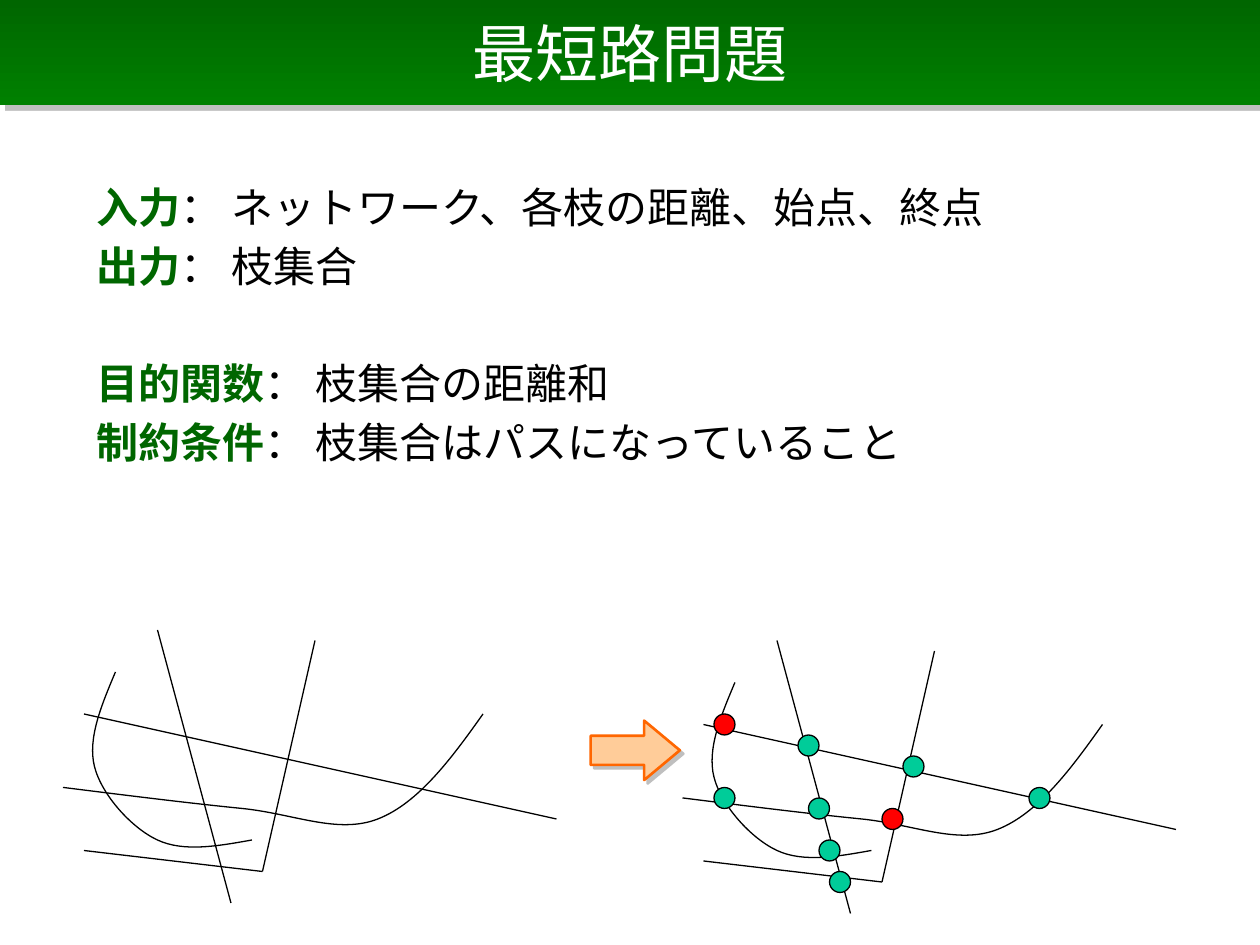
import pptx
import pptx.util
import pptx.dml.color
import pptx.enum.shapes
import pptx.enum.text
import pptx.oxml
import pptx.oxml.ns
import lxml.etree

Pt = pptx.util.Pt
qn = pptx.oxml.ns.qn
SHAPE = pptx.enum.shapes.MSO_SHAPE
FONT = "Times New Roman"


def color(hex_value):
    return pptx.dml.color.RGBColor.from_string(hex_value)


def set_shadow(shape, distance):
    """Replace the theme effects by a half-transparent grey shadow, or by none at 0."""
    shape_properties = shape._element.spPr
    for old in shape_properties.findall(qn("a:effectLst")):
        shape_properties.remove(old)
    effects = lxml.etree.SubElement(shape_properties, qn("a:effectLst"))
    if distance:
        effects.append(pptx.oxml.parse_xml(
            f'<a:outerShdw {pptx.oxml.ns.nsdecls("a")} dist="{Pt(distance)}" '
            'dir="2700000" algn="ctr" rotWithShape="0"><a:srgbClr val="808080">'
            '<a:alpha val="50000"/></a:srgbClr></a:outerShdw>'))


presentation = pptx.Presentation()
presentation.slide_width = Pt(720)
presentation.slide_height = Pt(540)
slide = presentation.slides.add_slide(presentation.slide_layouts[6])
shapes = slide.shapes

# Title band
title = shapes.add_shape(SHAPE.RECTANGLE, 0, 0, Pt(720), Pt(60))
title.fill.gradient()
title.fill.gradient_angle = 270
for stop, (position, shade) in zip(title.fill.gradient_stops, [(0, "006600"), (1, "008000")]):
    stop.position = position
    stop.color.rgb = color(shade)
title.line.fill.background()
set_shadow(title, 4.2)
title.text_frame.vertical_anchor = pptx.enum.text.MSO_ANCHOR.MIDDLE
heading = title.text_frame.paragraphs[0]
heading.text = "最短路問題"
heading.alignment = pptx.enum.text.PP_ALIGN.CENTER
heading.font.size = Pt(36)
heading.font.name = FONT
heading.font.color.rgb = color("FFFFFF")

# Problem definition: term, description, space before
definitions = [
    ("入力", "： ネットワーク、各枝の距離、始点、終点", 4.8),
    ("出力", "： 枝集合", 4.8),
    ("目的関数", "： 枝集合の距離和", 38.4),
    ("制約条件", "： 枝集合はパスになっていること", 4.8),
]
body = shapes.add_textbox(Pt(48), Pt(100), Pt(612), Pt(264)).text_frame
body.word_wrap = True
for i, (term, description, space) in enumerate(definitions):
    line = body.add_paragraph() if i else body.paragraphs[0]
    line.space_before = Pt(space)
    line.font.size = Pt(24)
    line.font.name = FONT
    properties = line._p.get_or_add_pPr()
    properties.set("marL", str(Pt(27)))
    properties.set("indent", str(Pt(-27)))
    for text, shade, bold in [(term, "006600", True), (description, "000000", False)]:
        run = line.add_run()
        run.text = text
        run.font.bold = bold
        run.font.color.rgb = color(shade)

# Road map, drawn once plain and once under the nodes
straight_roads = [
    (90, 360, 132, 516),
    (48, 408, 318, 468),
    (48, 486, 150, 498),
    (150, 498, 180, 366),
]
# Each curve: start point, then two control points and an end point per segment
curved_roads = [
    [(276, 408), (258, 433.5), (239, 459), (216, 468), (193, 477), (168, 465),
     (138, 462), (108, 459), (72, 454.5), (36, 450)],
    [(66, 384), (58, 403), (50, 422), (54, 438), (58, 454), (75, 473),
     (90, 480), (105, 487), (124.5, 483.5), (144, 480)],
]
for dx, dy in [(0, 0), (354, 6)]:
    for x1, y1, x2, y2 in straight_roads:
        road = shapes.add_connector(pptx.enum.shapes.MSO_CONNECTOR.STRAIGHT,
                                    Pt(x1 + dx), Pt(y1 + dy), Pt(x2 + dx), Pt(y2 + dy))
        road.line.color.rgb = color("000000")
        road.line.width = Pt(0.75)
        set_shadow(road, 0)
    for points in curved_roads:
        start, *rest = [(Pt(x + dx), Pt(y + dy)) for x, y in points]
        builder = shapes.build_freeform(*start)
        builder.add_line_segments(rest, close=False)
        road = builder.convert_to_shape()
        # Join every three line segments into one Bézier segment
        outline = road._element.find(".//" + qn("a:path"))
        for n, segment in enumerate(outline.findall(qn("a:lnTo"))):
            if n % 3 == 0:
                bezier = lxml.etree.SubElement(outline, qn("a:cubicBezTo"))
            bezier.append(segment[0])
            outline.remove(segment)
        road.fill.background()
        road.line.color.rgb = color("000000")
        road.line.width = Pt(0.75)
        road.shadow.inherit = False

# Nodes at the crossings; start and end are red
crossings = [(456, 420), (408, 450), (468, 480), (516, 432),
             (588, 450), (462, 456), (474, 498)]
endpoints = [(408, 408), (504, 462)]
for shade, places in [("00CC99", crossings), ("FF0000", endpoints)]:
    for x, y in places:
        node = shapes.add_shape(SHAPE.OVAL, Pt(x), Pt(y), Pt(12), Pt(12))
        node.fill.solid()
        node.fill.fore_color.rgb = color(shade)
        node.line.color.rgb = color("000000")
        node.line.width = Pt(0.75)
        node.shadow.inherit = False

# Arrow from roads to network
arrow = shapes.add_shape(SHAPE.RIGHT_ARROW, Pt(337.5), Pt(411.75), Pt(51), Pt(34))
arrow.adjustments[0] = 0.49
arrow.adjustments[1] = 0.6
arrow.fill.solid()
arrow.fill.fore_color.rgb = color("FFCC99")
arrow.line.color.rgb = color("FF6600")
arrow.line.width = Pt(1.5)
set_shadow(arrow, 2.8)

presentation.save("out.pptx")
